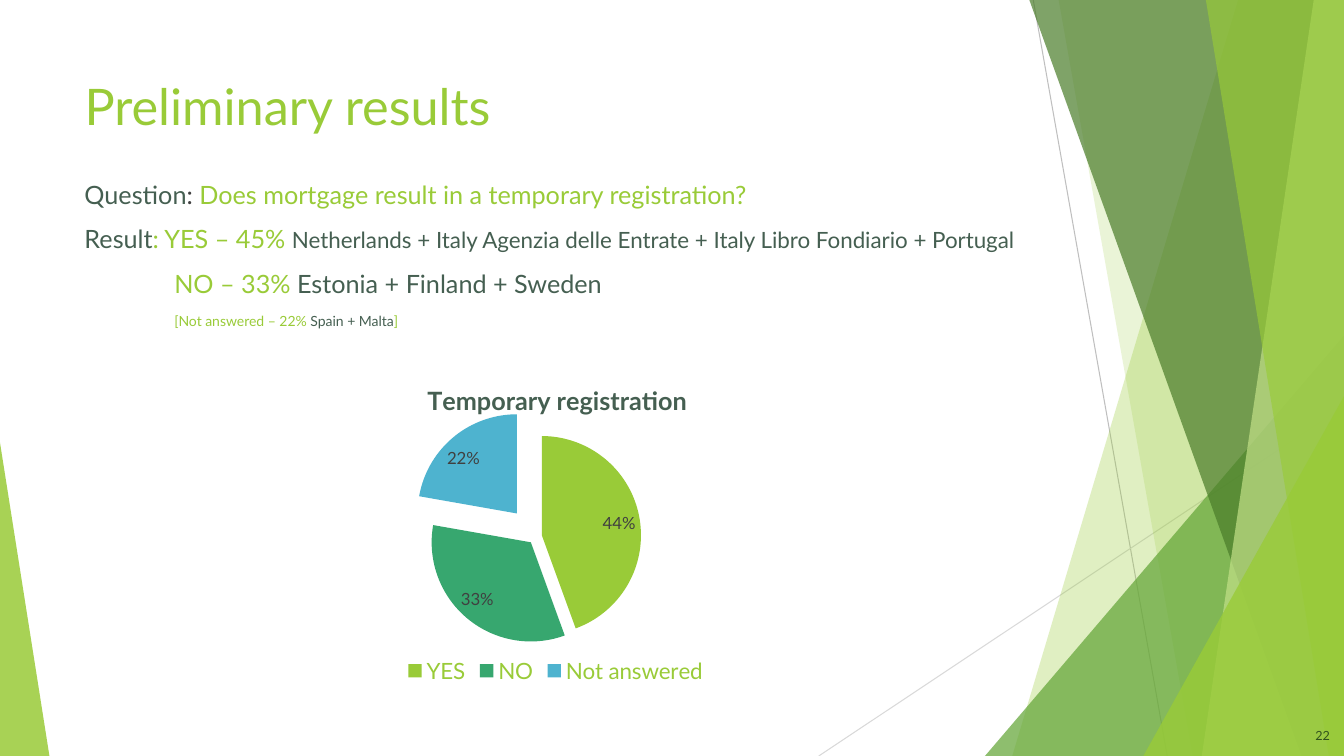
from dataclasses import dataclass, field
from typing import Any

from lxml import etree
from pptx import Presentation
from pptx import util as u
from pptx.chart import data as chart_data
from pptx.dml.color import RGBColor
from pptx.enum import chart as chart_enum, shapes, text
from pptx.oxml import ns

LIME = RGBColor(0x99, 0xCB, 0x38)
PALE_LIME = RGBColor(0xC2, 0xE0, 0x88)
LEAF = RGBColor(0x63, 0xA5, 0x37)
FOREST = RGBColor(0x4A, 0x7C, 0x29)
DEEP_GREEN = RGBColor(0x31, 0x52, 0x1C)
SLATE = RGBColor(0x45, 0x5F, 0x51)
CHARCOAL = RGBColor(0x40, 0x40, 0x40)
JADE = RGBColor(0x37, 0xA7, 0x6F)
SKY = RGBColor(0x4E, 0xB3, 0xCF)
MID_GREY = RGBColor(0xBF, 0xBF, 0xBF)
LIGHT_GREY = RGBColor(0xD9, 0xD9, 0xD9)
FONT = "Lato"
SLIDE_WIDTH, SLIDE_HEIGHT = u.Inches(13.33), u.Inches(7.5)


@dataclass
class Ray:
    start: tuple[float, float]
    end: tuple[float, float]
    color: RGBColor


@dataclass
class Band:
    top_left: float
    bottom_left: float
    color: RGBColor
    opacity: int


@dataclass
class Wedge:
    left: float
    top: float
    width: float
    apex: int
    color: RGBColor
    opacity: int


@dataclass
class Run:
    words: str
    size: float
    color: RGBColor


@dataclass
class TextBlock:
    box: tuple[float, float, float, float]
    lines: list[list[Run]]
    indents: list[float] = field(default_factory=lambda: [0])
    frame_format: dict[str, Any] = field(default_factory=dict)
    paragraph_format: dict[str, Any] = field(default_factory=dict)


@dataclass
class Slice:
    label: str
    value: int
    color: RGBColor
    explosion: int


RAYS = [Ray((76.88, 0), (86.85, 100), MID_GREY), Ray((100, 53.73), (60.92, 100), LIGHT_GREY)]
BACKDROP: list[Band | Wedge] = [
    Band(92.12, 75.32, LIME, 30),
    Band(78.77, 88.75, LIME, 20),
    Wedge(73.29, 44.4, 26.71, 1, LEAF, 72),
    Band(76.59, 96.85, FOREST, 70),
    Band(97.75, 89.42, PALE_LIME, 70),
    Band(89.72, 98.87, LIME, 65),
    Wedge(85.07, 52.4, 14.93, 1, LIME, 80),
    Wedge(0, 58.53, 3.68, 0, LIME, 85),
]
TEXT_BLOCKS = [
    TextBlock((5.55, 8.93, 70.52, 10), [[Run("Preliminary results", 36, LIME)]],
              frame_format={"vertical_anchor": text.MSO_ANCHOR.MIDDLE}),
    TextBlock(
        (5.55, 23.07, 73.07, 65.07),
        [
            [Run("Question", 18, SLATE), Run(": ", 18, CHARCOAL),
             Run("Does mortgage result in a temporary registration?", 18, LIME)],
            [Run("Result", 18, SLATE), Run(": YES – 45% ", 18, LIME),
             Run("Netherlands + Italy Agenzia delle Entrate + Italy Libro Fondiario + Portugal", 16, SLATE)],
            [Run("NO – 33% ", 18, LIME), Run("Estonia + Finland + Sweden", 18, SLATE)],
            [Run("[Not answered – 22% ", 10, LIME), Run("Spain + Malta", 10, SLATE), Run("]", 10, LIME)],
        ],
        indents=[0, 0, 6.68, 6.68],
    ),
    TextBlock((94.07, 94.67, 5.63, 5.33), [[Run("22", 9, DEEP_GREEN)]],
              frame_format={"vertical_anchor": text.MSO_ANCHOR.MIDDLE},
              paragraph_format={"alignment": text.PP_ALIGN.RIGHT}),
]
CHART_BOX = (12.3, 47.33, 58.06, 43.73)
SLICES = [Slice("YES", 44, LIME, 6), Slice("NO", 33, JADE, 8), Slice("Not answered", 22, SKY, 30)]


def across(percent: float) -> int:
    return round(SLIDE_WIDTH * percent / 100)


def down(percent: float) -> int:
    return round(SLIDE_HEIGHT * percent / 100)


def place(box: tuple[float, float, float, float]) -> tuple[int, int, int, int]:
    left, top, width, height = box
    return across(left), down(top), across(width), down(height)


def apply(target: Any, formats: dict[str, Any]) -> None:
    for name, value in formats.items():
        setattr(target, name, value)


def style_font(font: Any, size: float, color: RGBColor, bold: bool = False) -> None:
    apply(font, {"name": FONT, "size": u.Pt(size), "bold": bold})
    font.color.rgb = color


def draw_ray(slide: Any, ray: Ray) -> None:
    line = slide.shapes.add_connector(
        shapes.MSO_CONNECTOR.STRAIGHT, across(ray.start[0]), down(ray.start[1]),
        across(ray.end[0]), down(ray.end[1]))
    line.line.color.rgb = ray.color
    line.line.width = u.Pt(0.75)
    etree.SubElement(line._element.spPr, ns.qn("a:effectLst"))


def draw_backdrop(slide: Any, piece: Band | Wedge) -> None:
    if isinstance(piece, Band):
        builder = slide.shapes.build_freeform(across(piece.top_left), 0)
        builder.add_line_segments(
            [(SLIDE_WIDTH, 0), (SLIDE_WIDTH, SLIDE_HEIGHT), (across(piece.bottom_left), SLIDE_HEIGHT)])
        shape = builder.convert_to_shape()
    else:
        shape = slide.shapes.add_shape(
            shapes.MSO_SHAPE.ISOSCELES_TRIANGLE,
            *place((piece.left, piece.top, piece.width, 100 - piece.top)))
        shape.adjustments[0] = piece.apex
    shape.shadow.inherit = False
    shape.line.fill.background()
    shape.fill.solid()
    shape.fill.fore_color.rgb = piece.color
    color_element = shape._element.spPr.find(".//" + ns.qn("a:srgbClr"))
    etree.SubElement(color_element, ns.qn("a:alpha"), val=str(piece.opacity * 1000))


def draw_text(slide: Any, block: TextBlock) -> None:
    frame = slide.shapes.add_textbox(*place(block.box)).text_frame
    apply(frame, {"word_wrap": True, **block.frame_format})
    for index, (runs, indent) in enumerate(zip(block.lines, block.indents)):
        paragraph = frame.add_paragraph() if index else frame.paragraphs[0]
        apply(paragraph, {"space_before": u.Pt(10 if index else 0), **block.paragraph_format})
        if indent:
            paragraph._p.get_or_add_pPr().set("indent", str(across(indent)))
        for item in runs:
            run = paragraph.add_run()
            run.text = item.words
            style_font(run.font, item.size, item.color)


def set_layout(part: Any, position: int, values: dict[str, Any]) -> None:
    for old_layout in part.findall(ns.qn("c:layout")):
        part.remove(old_layout)
    layout = etree.Element(ns.qn("c:layout"))
    manual = etree.SubElement(layout, ns.qn("c:manualLayout"))
    for name, value in values.items():
        etree.SubElement(manual, ns.qn(f"c:{name}"), val=str(value))
    part.insert(position, layout)


def draw_pie(slide: Any) -> None:
    data = chart_data.CategoryChartData()
    data.categories = [item.label for item in SLICES]
    data.add_series("Series 1", [item.value for item in SLICES])
    chart = slide.shapes.add_chart(chart_enum.XL_CHART_TYPE.PIE, *place(CHART_BOX), data).chart
    style_font(chart.font, 10, RGBColor(0, 0, 0))
    apply(chart, {"has_title": True, "has_legend": True})
    title = chart.chart_title
    title.text_frame.text = "Temporary registration"
    style_font(title.text_frame.paragraphs[0].runs[0].font, 18, SLATE, bold=True)
    edges = {"xMode": "edge", "yMode": "edge"}
    set_layout(title._element, 1, {**edges, "x": 0.33, "y": 0.06})
    set_layout(chart._chartSpace.chart.plotArea, 0,
               {"layoutTarget": "inner", **edges, "x": 0, "y": 0.24, "w": 0.95, "h": 0.6})
    apply(chart.legend, {"position": chart_enum.XL_LEGEND_POSITION.BOTTOM, "include_in_layout": False})
    style_font(chart.legend.font, 16, LIME)
    plot = chart.plots[0]
    plot.vary_by_categories = True
    series = plot.series[0]
    for index, item in enumerate(SLICES):
        fill = series.points[index].format.fill
        fill.solid()
        fill.fore_color.rgb = item.color
        point = series._element.findall(ns.qn("c:dPt"))[index]
        explosion = etree.Element(ns.qn("c:explosion"), val=str(item.explosion))
        point.find(ns.qn("c:spPr")).addprevious(explosion)
    labels = series.data_labels
    apply(labels, {"show_percentage": True, "show_value": False, "number_format": "0%",
                   "number_format_is_linked": False,
                   "position": chart_enum.XL_LABEL_POSITION.BEST_FIT})
    style_font(labels.font, 12, CHARCOAL)


def main() -> None:
    presentation = Presentation()
    apply(presentation, {"slide_width": SLIDE_WIDTH, "slide_height": SLIDE_HEIGHT})
    slide = presentation.slides.add_slide(presentation.slide_layouts[6])
    for ray in RAYS:
        draw_ray(slide, ray)
    for piece in BACKDROP:
        draw_backdrop(slide, piece)
    for block in TEXT_BLOCKS:
        draw_text(slide, block)
    draw_pie(slide)
    presentation.save("out.pptx")


if __name__ == "__main__":
    main()
